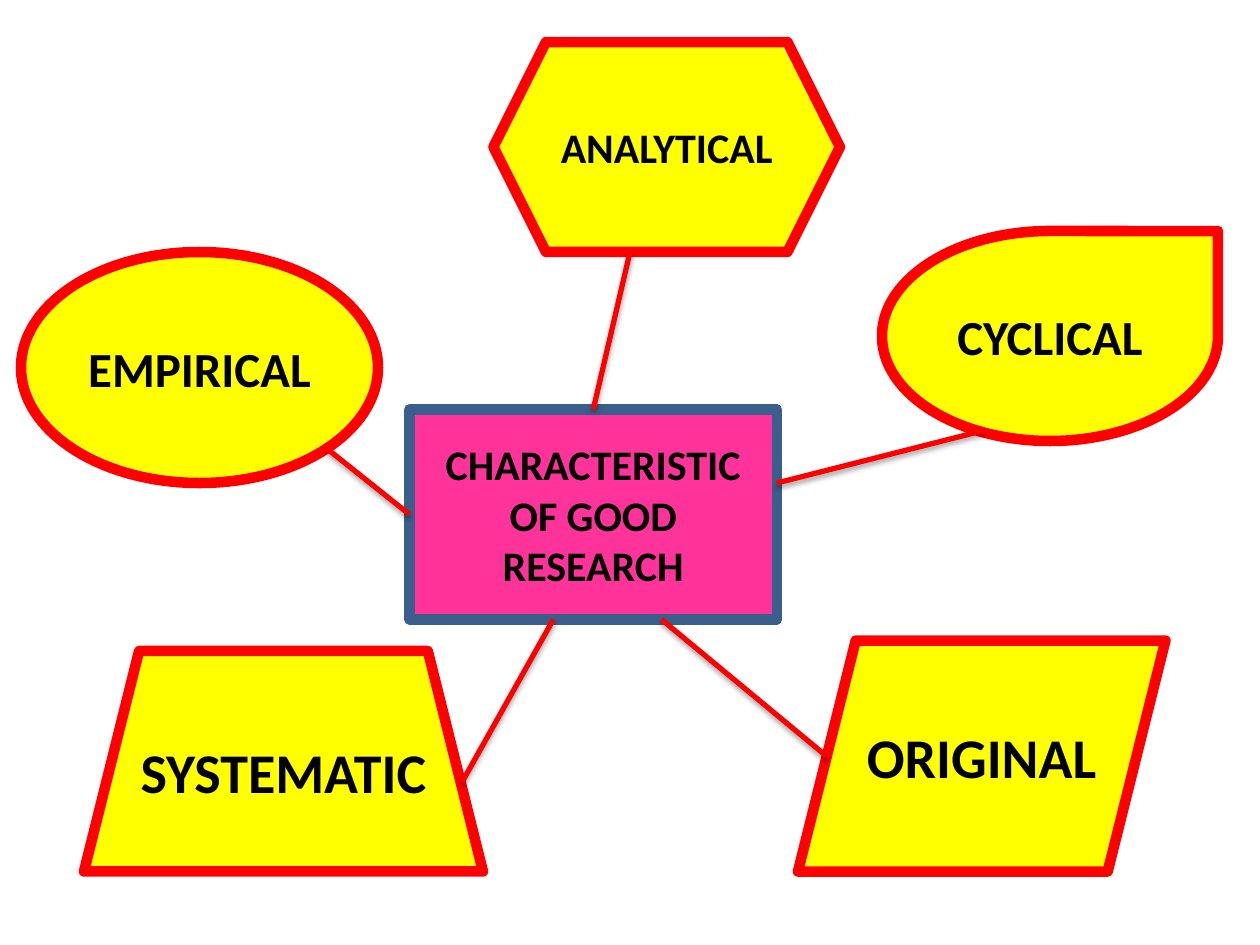
import pptx
import pptx.dml.color
import pptx.enum.shapes
import pptx.enum.text
import pptx.oxml
import pptx.oxml.ns
import pptx.util

SHAPES = pptx.enum.shapes.MSO_SHAPE
COLORS = {
    "center": "FF3399",
    "center_edge": "3A5F8C",
    "trait": "FFFF00",
    "red": "FF0000",
    "text": "000000",
}
# The slide is a grid of 120 columns by 90 rows, twelve to the inch
COLUMNS, ROWS, PER_INCH = 120, 90, 12
TOP, LEFT = 0, 1  # connection sites of a rectangle

# Name, preset shape, (column, row, columns, rows), text size
TRAITS = [
    ("EMPIRICAL", SHAPES.OVAL, (2, 24, 34, 22), 28),
    ("ANALYTICAL", SHAPES.HEXAGON, (47, 4, 33, 20), 24),
    ("CYCLICAL", SHAPES.TEAR, (84, 22, 32, 20), 28),
    ("SYSTEMATIC", SHAPES.TRAPEZOID, (8, 62, 38, 21), 32),
    ("ORIGINAL", SHAPES.PARALLELOGRAM, (76, 61, 35, 22), 32),
]
# Start at the center box, end at the trait, site joined on the box
SPOKES = [
    ((74, 46), (93.7, 41), None),
    ((56.5, 39), (60, 24), TOP),
    ((39, 49), (31.1, 42.7), LEFT),
    ((52.7, 59), (44, 74.5), None),
    ((63, 59), (78.7, 72), None),
]
SHADOW = (
    f"<a:effectLst {pptx.oxml.ns.nsdecls('a')}>"
    '<a:outerShdw blurRad="40000" dist="23000" dir="5400000" rotWithShape="0">'
    '<a:srgbClr val="000000"><a:alpha val="35000"/></a:srgbClr>'
    "</a:outerShdw></a:effectLst>"
)


def grid(*units):
    return [pptx.util.Inches(unit / PER_INCH) for unit in units]


def color(name):
    return pptx.dml.color.RGBColor.from_string(COLORS[name])


def set_line(line, name, width):
    line.color.rgb = color(name)
    line.width = pptx.util.Pt(width)


def add_box(page, text, preset, place, size, fill="trait", edge="red"):
    box = page.shapes.add_shape(preset, *grid(*place))
    box.shadow.inherit = False
    box.fill.solid()
    box.fill.fore_color.rgb = color(fill)
    set_line(box.line, edge, 6)

    box.text_frame.vertical_anchor = pptx.enum.text.MSO_ANCHOR.MIDDLE
    para = box.text_frame.paragraphs[0]
    para.alignment = pptx.enum.text.PP_ALIGN.CENTER
    span = para.add_run()
    span.text = text
    font_format = {"name": "Calibri", "size": pptx.util.Pt(size), "bold": True}
    for key, value in font_format.items():
        setattr(span.font, key, value)
    span.font.color.rgb = color("text")
    return box


def add_spoke(page, center, start, end, site):
    straight = pptx.enum.shapes.MSO_CONNECTOR.STRAIGHT
    spoke = page.shapes.add_connector(straight, *grid(*start, *end))
    if site is not None:
        spoke.begin_connect(center, site)
    set_line(spoke.line, "red", 3)
    spoke._element.spPr.append(pptx.oxml.parse_xml(SHADOW))


def main():
    deck = pptx.Presentation()
    deck.slide_width, deck.slide_height = grid(COLUMNS, ROWS)
    page = deck.slides.add_slide(deck.slide_layouts[6])

    # Central topic
    center = add_box(page, "CHARACTERISTIC OF GOOD RESEARCH", SHAPES.RECTANGLE,
                     (39, 39, 35, 20), 24, "center", "center_edge")

    # Traits around it
    for trait in TRAITS:
        add_box(page, *trait)

    # Lines from the topic to its traits
    for spoke in SPOKES:
        add_spoke(page, center, *spoke)

    deck.save("out.pptx")


if __name__ == "__main__":
    main()
